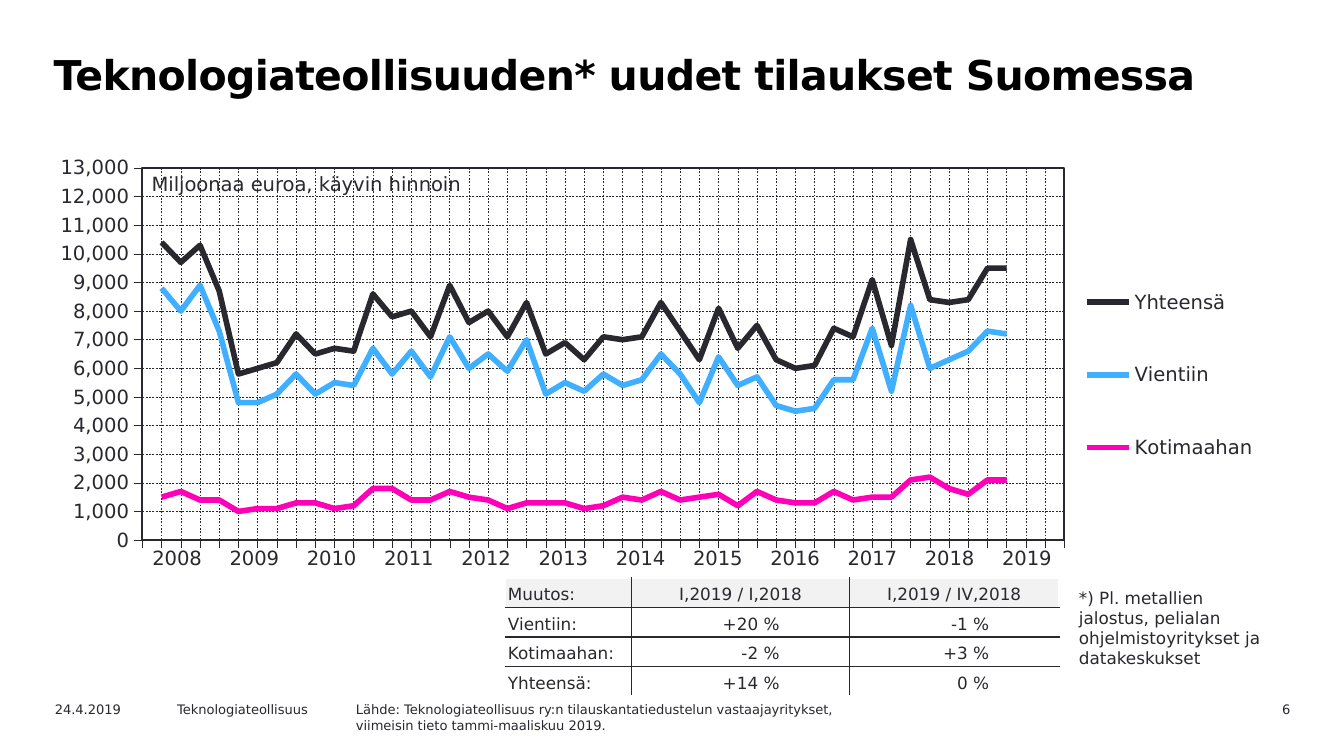
from lxml.etree import SubElement
from pptx import Presentation
from pptx.chart.data import CategoryChartData
from pptx.dml.color import RGBColor
from pptx.enum.chart import XL_CHART_TYPE as ChartType, XL_LEGEND_POSITION as LegendPosition
from pptx.enum.chart import XL_TICK_LABEL_POSITION as LabelPosition, XL_TICK_MARK as TickMark
from pptx.enum.dml import MSO_LINE_DASH_STYLE as Dash
from pptx.enum.text import MSO_ANCHOR as Anchor, PP_ALIGN as Align
from pptx.oxml import parse_xml
from pptx.oxml.ns import nsdecls, qn
from pptx.util import Inches, Pt

THEME = {
    "font": "DejaVu Sans", "ink": "29282E", "black": "000000", "white": "FFFFFF", "header": "F2F2F2",
    "title": 22, "label": 10.5, "body": 9, "footer": 7, "axis_line": 0.22, "grid_line": 0.25,
    "series_line": 3, "border": 1, "no_style": "{2D5ABB26-0587-4C30-8999-92F81FD0307C}",
}

TITLE = "Teknologiateollisuuden* uudet tilaukset Suomessa"
UNIT = "Miljoonaa euroa, käyvin hinnoin"
NOTE = "*) Pl. metallien jalostus, pelialan ohjelmistoyritykset ja datakeskukset"
FOOTERS = [
    ((8.76, 5.17, 0.94, 0.18), ["6"], Align.RIGHT),
    ((0.31, 5.17, 1, 0.18), ["24.4.2019"], Align.LEFT),
    ((1.22, 5.17, 1.42, 0.18), ["Teknologiateollisuus"], Align.LEFT),
    ((2.55, 5.17, 5.07, 0.18), [
        "Lähde: Teknologiateollisuus ry:n tilauskantatiedustelun vastaajayritykset,",
        "viimeisin tieto tammi-maaliskuu 2019.",
    ], Align.LEFT),
]
CHART_BOX = (0.31, 1.11, 9.18, 3.33)
PLOT_BOX = (1.06, 1.25, 6.86, 2.77)
LEGEND_BOX = (8.01, 1.79, 1.39, 2)
YEARS = range(2008, 2020)
SERIES = [
    ("Yhteensä", "29282E", [
        10400, 9700, 10300, 8700, 5800, 6000, 6200, 7200, 6500, 6700, 6600, 8600, 7800, 8000, 7100,
        8900, 7600, 8000, 7100, 8300, 6500, 6900, 6300, 7100, 7000, 7100, 8300, 7300, 6300, 8100,
        6700, 7500, 6300, 6000, 6100, 7400, 7100, 9100, 6800, 10500, 8400, 8300, 8400, 9500, 9500]),
    ("Vientiin", "40AFFF", [
        8800, 8000, 8900, 7300, 4800, 4800, 5100, 5800, 5100, 5500, 5400, 6700, 5800, 6600, 5700,
        7100, 6000, 6500, 5900, 7000, 5100, 5500, 5200, 5800, 5400, 5600, 6500, 5800, 4800, 6400,
        5400, 5700, 4700, 4500, 4600, 5600, 5600, 7400, 5200, 8200, 6000, 6300, 6600, 7300, 7200]),
    ("Kotimaahan", "FF00B8", [
        1500, 1700, 1400, 1400, 1000, 1100, 1100, 1300, 1300, 1100, 1200, 1800, 1800, 1400, 1400,
        1700, 1500, 1400, 1100, 1300, 1300, 1300, 1100, 1200, 1500, 1400, 1700, 1400, 1500, 1600,
        1200, 1700, 1400, 1300, 1300, 1700, 1400, 1500, 1500, 2100, 2200, 1800, 1600, 2100, 2100]),
]
CHANGES = [
    ("Muutos:", "I,2019 / I,2018", "I,2019 / IV,2018"),
    ("Vientiin:", "+20 %", "-1 %"),
    ("Kotimaahan:", "-2 %", "+3 %"),
    ("Yhteensä:", "+14 %", "0 %"),
]


def style_font(font, size, color=THEME["ink"], bold=False):
    font.name, font.size, font.bold = THEME["font"], Pt(size), bold
    font.color.rgb = RGBColor.from_string(color)


def style_line(line, width, color=THEME["ink"], dash=None):
    line.width = Pt(width)
    line.color.rgb = RGBColor.from_string(color)
    if dash:
        line.dash_style = dash


def write(frame, lines, size, align=Align.LEFT, color=THEME["ink"], bold=False):
    for index, line in enumerate(lines):
        paragraph = frame.add_paragraph() if index else frame.paragraphs[0]
        paragraph.alignment = align
        run = paragraph.add_run()
        run.text = line
        style_font(run.font, size, color, bold)


def add_text(slide, box, lines, size, align=Align.LEFT, wrap=True, **style):
    frame = slide.shapes.add_textbox(*map(Inches, box)).text_frame
    frame.word_wrap = wrap
    write(frame, lines, size, align, **style)
    return frame


def add_plain_table(slide, box, rows, widths):
    shape = slide.shapes.add_table(rows, len(widths), *map(Inches, box))
    table = shape.table
    table.first_row = table.horz_banding = False
    for style_id in shape.element.xpath(".//a:tableStyleId"):
        style_id.text = THEME["no_style"]
    for column, width in zip(table.columns, widths):
        column.width = Inches(width)
    return table


def set_borders(cell, colors):
    properties = cell._tc.get_or_add_tcPr()
    for side, color in zip("LRTB", colors):
        line = SubElement(properties, qn(f"a:ln{side}"), w=str(Pt(THEME["border"])))
        SubElement(SubElement(line, qn("a:solidFill")), qn("a:srgbClr"), val=color)


def set_layout(parent, box, inner=False):
    left, top, width, height = CHART_BOX
    x, y, w, h = box
    target = '<c:layoutTarget val="inner"/>' if inner else ""
    values = "".join(f'<c:{name} val="{value}"/>' for name, value in (
        ("xMode", "edge"), ("yMode", "edge"), ("x", (x - left) / width), ("y", (y - top) / height),
        ("w", w / width), ("h", h / height)))
    for old in parent.findall(qn("c:layout")):
        parent.remove(old)
    layout = parse_xml(f'<c:layout {nsdecls("c")}><c:manualLayout>{target}{values}</c:manualLayout></c:layout>')
    parent.insert(0 if inner else 1, layout)


def start_on_axis(chart):
    for old in chart.element.xpath(".//c:crossBetween"):
        old.getparent().remove(old)
    crosses = chart.element.xpath(".//c:valAx/c:crosses")[0]
    crosses.addnext(parse_xml(f'<c:crossBetween {nsdecls("c")} val="midCat"/>'))


def add_orders_chart(slide):
    data = CategoryChartData(number_format="#,##0")
    data.categories = [str(number) for number in range(1, len(SERIES[0][2]) + 2)]
    for name, _, values in SERIES:
        data.add_series(name, [None, *values, None, None, None])
    chart = slide.shapes.add_chart(ChartType.LINE, *map(Inches, CHART_BOX), data).chart
    chart.has_title = False
    style_font(chart.font, THEME["label"])

    value_axis, category_axis = chart.value_axis, chart.category_axis
    for axis in (value_axis, category_axis):
        axis.has_major_gridlines = True
        axis.major_tick_mark, axis.minor_tick_mark = TickMark.OUTSIDE, TickMark.NONE
        style_line(axis.format.line, THEME["axis_line"])
        style_line(axis.major_gridlines.format.line, THEME["grid_line"], dash=Dash.DASH)
    category_axis.tick_label_position = LabelPosition.NONE
    value_axis.minimum_scale, value_axis.maximum_scale, value_axis.major_unit = 0, 13000, 1000
    value_axis.tick_labels.number_format = "#,##0"
    value_axis.tick_labels.number_format_is_linked = False
    style_font(value_axis.tick_labels.font, THEME["label"])
    start_on_axis(chart)

    chart.plots[0].vary_by_categories = False
    for series, (_, color, _) in zip(chart.plots[0].series, SERIES):
        series.smooth = False
        style_line(series.format.line, THEME["series_line"], color)

    chart.has_legend = True
    chart.legend.position = LegendPosition.RIGHT
    chart.legend.include_in_layout = False
    style_font(chart.legend.font, THEME["label"])
    set_layout(chart.element.xpath(".//c:legend")[0], LEGEND_BOX)
    plot_area = chart.element.xpath(".//c:plotArea")[0]
    set_layout(plot_area, PLOT_BOX, inner=True)
    plot_area.append(parse_xml(
        f'<c:spPr {nsdecls("c", "a")}><a:noFill/><a:ln w="{Pt(1)}"><a:solidFill>'
        f'<a:srgbClr val="{THEME["ink"]}"/></a:solidFill></a:ln></c:spPr>'))


def add_year_labels(slide):
    table = add_plain_table(slide, (1.03, 4.02, 6.9, 0.31), 1, [6.9 / len(YEARS)] * len(YEARS))
    for cell, year in zip(table.rows[0].cells, YEARS):
        cell.fill.background()
        write(cell.text_frame, [str(year)], THEME["label"], Align.CENTER)


def add_change_table(slide):
    table = add_plain_table(slide, (3.76, 4.3, 4.12, 0.88), len(CHANGES), [0.94, 1.62, 1.56])
    last_row, last_column = len(CHANGES) - 1, len(CHANGES[0]) - 1
    for row, texts in enumerate(CHANGES):
        for column, text in enumerate(texts):
            cell = table.cell(row, column)
            is_number = row > 0 and column > 0
            cell.margin_left = cell.margin_top = cell.margin_bottom = Inches(0.02)
            cell.margin_right = Inches(0.52 if is_number else 0.02)
            cell.vertical_anchor = Anchor.BOTTOM
            outer = (column == 0, column == last_column, row == 0, row == last_row)
            set_borders(cell, [THEME["white"] if edge else THEME["ink"] for edge in outer])
            if row in (0, last_row):
                cell.fill.solid()
                cell.fill.fore_color.rgb = RGBColor.from_string(THEME["white"] if row else THEME["header"])
            else:
                cell.fill.background()
            align = Align.RIGHT if is_number else Align.CENTER if column else Align.LEFT
            write(cell.text_frame, [text], THEME["body"], align)


def main():
    presentation = Presentation()
    presentation.slide_width, presentation.slide_height = Inches(10), Inches(10 * 9 / 16)
    slide = presentation.slides.add_slide(presentation.slide_layouts[6])

    title = add_text(slide, (0.28, 0.31, 9.21, 0.71), [TITLE], THEME["title"], color=THEME["black"], bold=True)
    paragraph = title.paragraphs[0]
    paragraph.line_spacing = Pt(27)
    paragraph._p.get_or_add_pPr().set("marL", str(Inches(0.02)))
    paragraph.runs[0].font._element.set("spc", "-35")
    for box, lines, align in FOOTERS:
        add_text(slide, box, lines, THEME["footer"], align)
    add_orders_chart(slide)
    add_year_labels(slide)
    add_text(slide, (1.03, 1.23, 2.6, 0.27), [UNIT], THEME["label"], wrap=False)
    add_change_table(slide)
    add_text(slide, (7.93, 4.32, 1.66, 0.71), [NOTE], THEME["body"])
    presentation.save("out.pptx")


if __name__ == "__main__":
    main()
